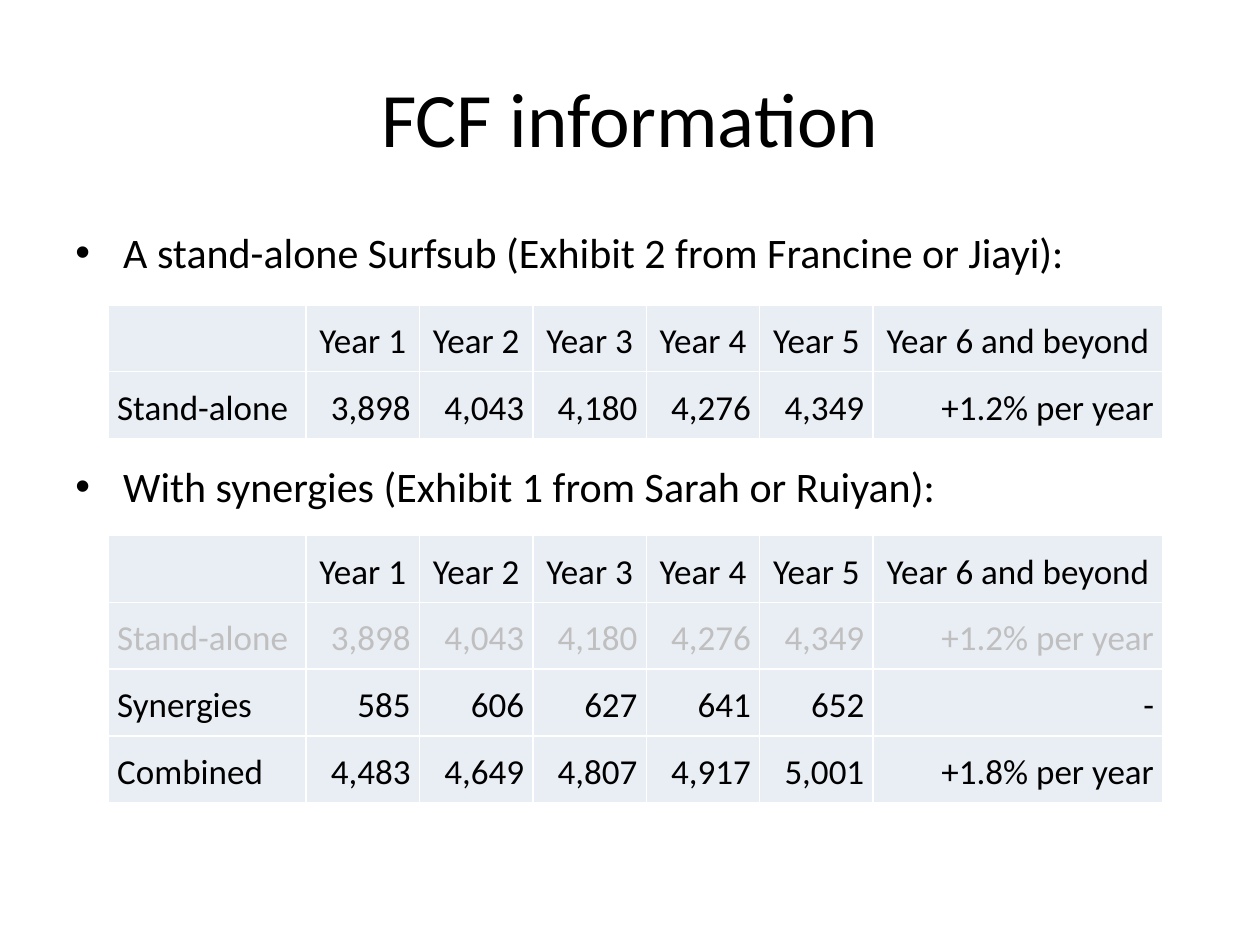
from dataclasses import dataclass

from lxml.etree import SubElement
from pptx import Presentation
from pptx.dml.color import RGBColor
from pptx.enum.text import MSO_ANCHOR, PP_ALIGN
from pptx.oxml.ns import qn
from pptx.util import Inches, Pt


@dataclass(frozen=True)
class Theme:
    font: str = "Calibri"
    ink: str = "000000"
    muted: str = "BFBFBF"
    cell: str = "E9EDF4"
    border: str = "FFFFFF"
    title_size: int = 44
    body_size: int = 24
    table_size: int = 20


THEME = Theme()


def add_text(paragraph, text, size, color=THEME.ink):
    run = paragraph.add_run()
    run.text = text
    run.font.name = THEME.font
    run.font.size = Pt(size)
    run.font.color.rgb = RGBColor.from_string(color)


def add_borders(cell):
    properties = cell._tc.get_or_add_tcPr()
    for position, side in enumerate(("a:lnL", "a:lnR", "a:lnT", "a:lnB")):
        line = SubElement(properties, qn(side), w=str(Pt(1)))
        properties.insert(position, line)  # borders must precede the fill
        fill = SubElement(line, qn("a:solidFill"))
        SubElement(fill, qn("a:srgbClr"), val=THEME.border)


presentation = Presentation()
presentation.slide_width = Inches(10)
presentation.slide_height = Inches(7.5)
slide = presentation.slides.add_slide(presentation.slide_layouts[6])

# Title
title = slide.shapes.add_textbox(Inches(0.5), Inches(0.3), Inches(9), Inches(1.25))
title.text_frame.word_wrap = True
title.text_frame.vertical_anchor = MSO_ANCHOR.MIDDLE
heading = title.text_frame.paragraphs[0]
heading.alignment = PP_ALIGN.CENTER
add_text(heading, "FCF information", THEME.title_size)

# Bullets, with room for the first table between them
body = slide.shapes.add_textbox(Inches(0.5), Inches(1.75), Inches(9), Inches(4.95))
body.text_frame.word_wrap = True
bullets = [
    ("A stand-alone Surfsub (Exhibit 2 from Francine or Jiayi):", 5),
    ("With synergies (Exhibit 1 from Sarah or Ruiyan):", 105),
]
for index, (sentence, space_before) in enumerate(bullets):
    bullet = body.text_frame.add_paragraph() if index else body.text_frame.paragraphs[0]
    bullet.space_before = Pt(space_before)
    properties = bullet._p.get_or_add_pPr()
    properties.set("marL", str(Inches(0.38)))
    properties.set("indent", str(Inches(-0.38)))
    SubElement(properties, qn("a:buFont"), typeface="Arial")
    SubElement(properties, qn("a:buChar"), char="•")
    add_text(bullet, sentence, THEME.body_size)

# Cash flow tables
header = ["", *(f"Year {year}" for year in range(1, 6)), "Year 6 and beyond"]
stand_alone = ["Stand-alone", "3,898", "4,043", "4,180", "4,276", "4,349", "+1.2% per year"]
synergies = ["Synergies", "585", "606", "627", "641", "652", "-"]
combined = ["Combined", "4,483", "4,649", "4,807", "4,917", "5,001", "+1.8% per year"]
column_widths = [1.57] + [0.9] * 5 + [2.3]
row_height = 0.53

# Each entry: top, rows, index of the greyed row
cash_flows = [
    (4.25, [header, stand_alone, synergies, combined], 1),
    (2.42, [header, stand_alone], None),
]
for top, rows, muted_row in cash_flows:
    table = slide.shapes.add_table(
        len(rows), len(header), Inches(0.86), Inches(top),
        Inches(sum(column_widths)), Inches(row_height * len(rows)),
    ).table
    table.first_row = False
    table.horz_banding = False
    for column, width in zip(table.columns, column_widths):
        column.width = Inches(width)
    for row_index, values in enumerate(rows):
        color = THEME.muted if row_index == muted_row else THEME.ink
        for column_index, value in enumerate(values):
            cell = table.cell(row_index, column_index)
            cell.fill.solid()
            cell.fill.fore_color.rgb = RGBColor.from_string(THEME.cell)
            add_borders(cell)
            cell.vertical_anchor = MSO_ANCHOR.MIDDLE
            cell.margin_left = cell.margin_right = Inches(0.07)
            cell.margin_top = cell.margin_bottom = Inches(0.07)
            if not value:
                continue
            entry = cell.text_frame.paragraphs[0]
            entry.line_spacing = 1.15
            if row_index == 0:
                entry.alignment = PP_ALIGN.CENTER
            elif column_index == 0:
                entry.alignment = PP_ALIGN.LEFT
            else:
                entry.alignment = PP_ALIGN.RIGHT
            add_text(entry, value, THEME.table_size, color)

presentation.save("out.pptx")
